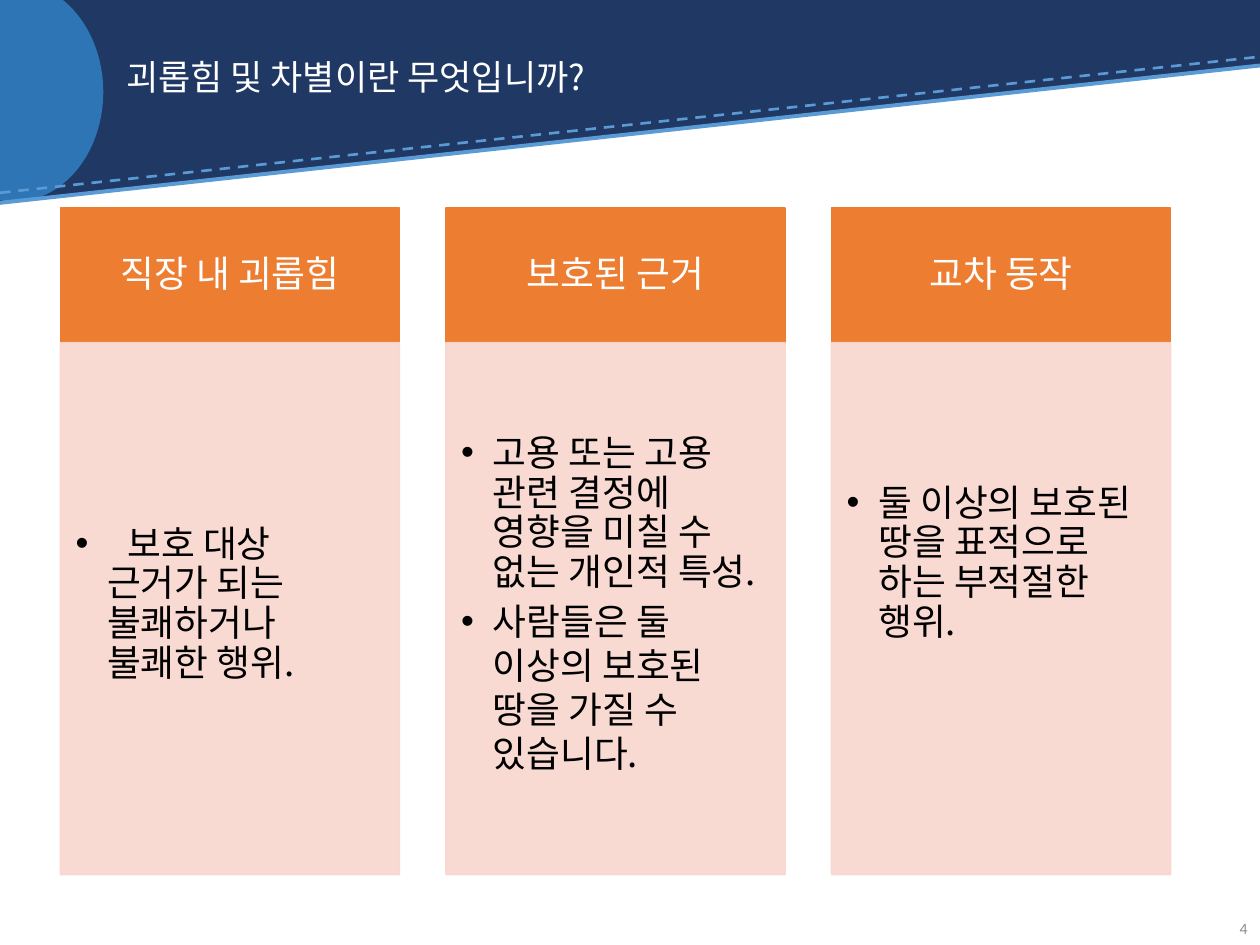
from dataclasses import dataclass
from typing import Any

from lxml import etree
from pptx import Presentation
from pptx.dml.color import RGBColor
from pptx.enum.dml import MSO_LINE
from pptx.enum.shapes import MSO_CONNECTOR, MSO_SHAPE
from pptx.enum.text import MSO_ANCHOR, PP_ALIGN
from pptx.oxml.ns import qn
from pptx.util import Inches, Pt

RECTANGLE = MSO_SHAPE.RECTANGLE
TRIANGLE = MSO_SHAPE.RIGHT_TRIANGLE
OVAL = MSO_SHAPE.OVAL
STRAIGHT = MSO_CONNECTOR.STRAIGHT
DASH = MSO_LINE.DASH
MIDDLE = MSO_ANCHOR.MIDDLE
LEFT, CENTER, RIGHT = PP_ALIGN.LEFT, PP_ALIGN.CENTER, PP_ALIGN.RIGHT

COLUMNS = [
    ("직장 내 괴롭힘", ["\t보호 대상 근거가 되는 불쾌하거나 불쾌한 행위."], [0.9], 0.18),
    ("보호된 근거",
     ["고용 또는 고용 관련 결정에 영향을 미칠 수 없는 개인적 특성.",
      "사람들은 둘 이상의 보호된 땅을 가질 수 있습니다."], [0.9, 1.0], 0.18),
    ("교차 동작", ["둘 이상의 보호된 땅을 표적으로 하는 부적절한 행위."], [0.9], 0.83),
]


def color(value):
    return RGBColor.from_string(value)


def add_alpha(fill_element, percent):
    fill = fill_element.find(qn("a:solidFill"))
    etree.SubElement(fill[0], qn("a:alpha"), val=str(percent * 1000))


def add_bullet(para):
    props = para._p.get_or_add_pPr()
    props.set("marL", str(Inches(0.25)))
    props.set("indent", str(-Inches(0.25)))
    etree.SubElement(props, qn("a:buFont"), typeface="Arial")
    etree.SubElement(props, qn("a:buChar"), char="•")
    if para.text.startswith("\t"):
        tabs = etree.SubElement(props, qn("a:tabLst"))
        etree.SubElement(tabs, qn("a:tab"), pos=str(Inches(0.41)), algn="l")


@dataclass
class SlideBuilder:
    page: Any
    font: str = "Noto Sans CJK KR"
    navy: str = "203864"
    blue: str = "2E75B6"
    light_blue: str = "5B9BD5"
    orange: str = "ED7D31"
    peach: str = "F8D7CE"

    def shape(self, kind, left, top, width, height, fill, line=False, alpha=None):
        shape = self.page.shapes.add_shape(
            kind, Inches(left), Inches(top), Inches(width), Inches(height))
        shape.shadow.inherit = False
        shape.fill.solid()
        shape.fill.fore_color.rgb = color(fill)
        if line:
            shape.line.color.rgb = color(fill)
            shape.line.width = Pt(1)
        else:
            shape.line.fill.background()
        if alpha:
            props = shape.element.spPr
            add_alpha(props, alpha)
            add_alpha(props.find(qn("a:ln")), alpha)
        return shape

    def line(self, start, end, width, dash=None):
        line = self.page.shapes.add_connector(
            STRAIGHT, *(Inches(value) for value in (*start, *end)))
        line.line.color.rgb = color(self.light_blue)
        line.line.width = Pt(width)
        if dash:
            line.line.dash_style = dash
        etree.SubElement(line.element.spPr, qn("a:effectLst"))

    def set_text(self, box, texts, size, ink, align=LEFT, spacing=(0.9,),
                 insets=(0.1, 0.05, 0.1, 0.05), bullet=False, font=None):
        frame = box.text_frame
        frame.word_wrap = True
        frame.vertical_anchor = MIDDLE
        (frame.margin_left, frame.margin_top,
         frame.margin_right, frame.margin_bottom) = map(Inches, insets)
        for index, (text, leading) in enumerate(zip(texts, spacing)):
            para = frame.add_paragraph() if index else frame.paragraphs[0]
            span = para.add_run()
            span.text = text
            para.alignment = align
            para.line_spacing = leading
            if index:
                para.space_before = Pt(3)
            if bullet:
                add_bullet(para)
            span.font.size = Pt(size)
            span.font.name = font or self.font
            span.font.color.rgb = color(ink)
            props = span._r.get_or_add_rPr()
            etree.SubElement(props, qn("a:ea"), typeface=font or self.font)

    def title(self, text):
        box = self.page.shapes.title
        self.page.shapes.element.append(box.element)
        box.left, box.top, box.width, box.height = map(Inches, (0.9, 0.2, 8.05, 0.86))
        self.set_text(box, [text], 20, "FFFFFF")

    def banner(self):
        self.shape(RECTANGLE, 0, 0, 10, 0.52, self.navy)
        wedge = self.shape(TRIANGLE, 0, 0.51, 10, 1.09, self.navy)
        wedge.element.spPr.find(qn("a:xfrm")).set("flipV", "1")
        self.shape(OVAL, -0.59, -0.14, 1.41, 1.74, self.blue)
        self.line((0, 1.53), (10, 0.45), 1.5, DASH)
        self.line((0, 1.61), (10, 0.52), 2.25)

    def column(self, left, heading, points, spacing, bottom):
        head = self.shape(RECTANGLE, left, 1.65, 2.69, 1.07, self.orange, line=True)
        self.set_text(head, [heading], 21, "FFFFFF", CENTER,
                      insets=(0.16, 0.09, 0.16, 0.09))
        body = self.shape(RECTANGLE, left, 2.72, 2.69, 4.22, self.peach,
                          line=True, alpha=90)
        self.set_text(body, points, 21, "000000", spacing=spacing,
                      insets=(0.12, 0.12, 0.16, bottom), bullet=True)

    def page_number(self, text):
        box = self.page.shapes.add_textbox(
            Inches(9.47), Inches(7.17), Inches(0.53), Inches(0.4))
        self.set_text(box, [text], 9, "8C8C8C", RIGHT, spacing=(1.0,), font="Calibri")


def main():
    deck = Presentation()
    deck.slide_width, deck.slide_height = Inches(10), Inches(7.5)
    builder = SlideBuilder(deck.slides.add_slide(deck.slide_layouts[5]))
    builder.banner()
    builder.title("괴롭힘 및 차별이란 무엇입니까?")
    builder.page_number("4")
    for index, column in enumerate(COLUMNS):
        builder.column(0.48 + index * 3.06, *column)
    deck.save("out.pptx")


if __name__ == "__main__":
    main()
